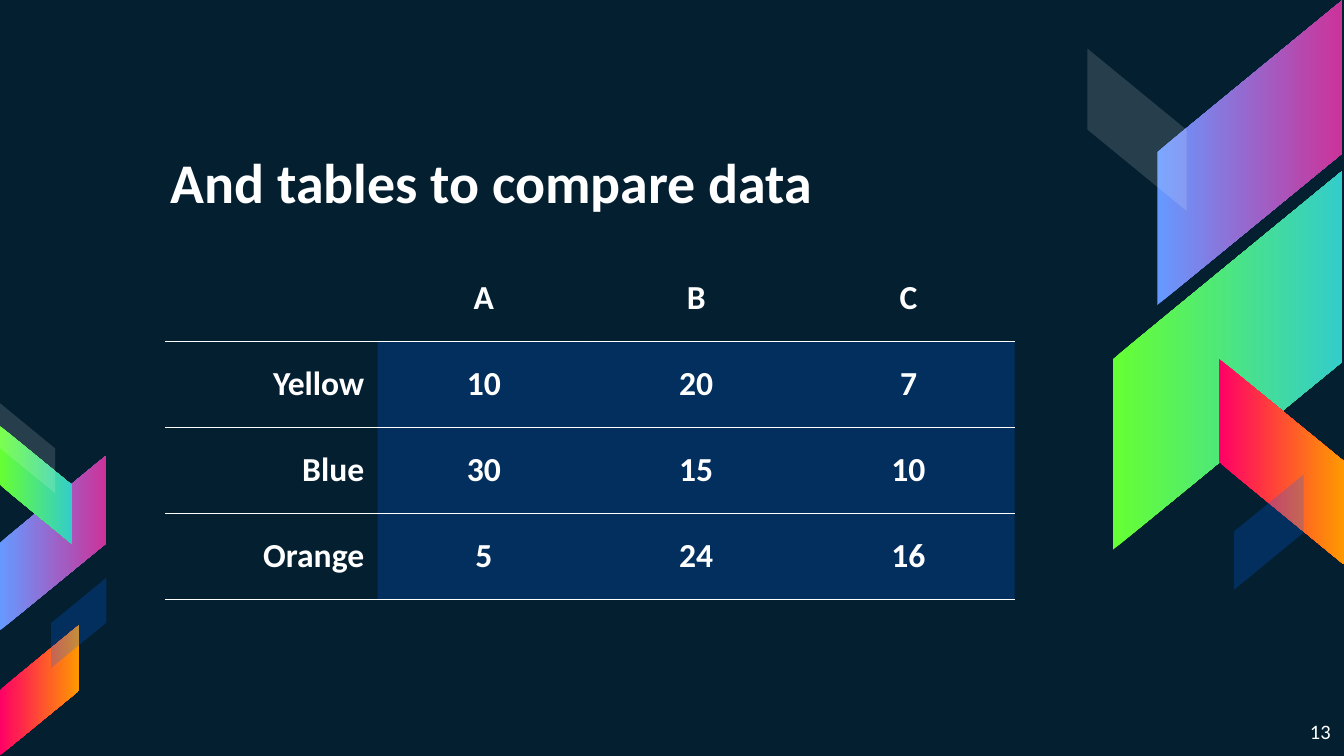
from lxml.etree import SubElement
from pptx import Presentation
from pptx.dml.color import RGBColor
from pptx.enum.shapes import MSO_SHAPE
from pptx.enum.text import MSO_ANCHOR, MSO_AUTO_SIZE, PP_ALIGN
from pptx.oxml import parse_xml
from pptx.oxml.ns import nsdecls, qn
from pptx.util import Inches, Pt

FONT = "Calibri"
COLORS = {
    "night": "041F30", "white": "FFFFFF", "blue": "0066FF",
    "magenta": "CC3399", "sky": "6699FF", "teal": "33CCCC",
    "lime": "66FF33", "pink": "FF0066", "orange": "FF9900",
}
NO_STYLE_NO_GRID = "{2D5ABB26-0587-4C30-8999-92F81FD0307C}"
BLUE_OPACITY, WHITE_OPACITY = 23, 14

# Ribbons: left, top, width, height within the cluster, rises to the right, paint.
# Paint is (left colour, right colour) or (colour, opacity in percent).
RIGHT_RIBBONS = [
    (0.52, 0, 1.38, 2.27, True, ("sky", "magenta")),
    (0.19, 1.27, 1.71, 2.82, True, ("lime", "teal")),
    (0.98, 2.67, 0.93, 1.53, False, ("pink", "orange")),
    (0, 0.36, 0.74, 1.21, False, ("white", WHITE_OPACITY)),
    (1.09, 3.53, 0.52, 0.86, True, ("blue", BLUE_OPACITY)),
]
LEFT_RIBBONS = [
    (0, 0.39, 0.79, 1.3, True, ("sky", "magenta")),
    (0, 0.17, 0.54, 0.88, False, ("lime", "teal")),
    (0, 1.65, 0.59, 0.97, True, ("pink", "orange")),
    (0, 0, 0.41, 0.67, False, ("white", WHITE_OPACITY)),
    (0.38, 1.3, 0.41, 0.67, True, ("blue", BLUE_OPACITY)),
]
ROWS = [
    ["", "A", "B", "C"],
    ["Yellow", "10", "20", "7"],
    ["Blue", "30", "15", "10"],
    ["Orange", "5", "24", "16"],
]


def rgb(name):
    return RGBColor.from_string(COLORS[name])


def fill_translucent(fill, properties, color, opacity):
    """Solid fill with opacity; properties is the XML element that holds the fill."""
    fill.solid()
    fill.fore_color.rgb = rgb(color)
    color_element = properties.find(f"{qn('a:solidFill')}/{qn('a:srgbClr')}")
    SubElement(color_element, qn("a:alpha"), val=str(opacity * 1000))


def write(paragraph, text, size, align, bold=True):
    paragraph.alignment = align
    run = paragraph.add_run()
    run.text = text
    run.font.name = FONT
    run.font.size = Pt(size)
    run.font.bold = bold
    run.font.color.rgb = rgb("white")


def set_insets(frame):
    frame.margin_left = frame.margin_right = Inches(0.1)
    frame.margin_top = frame.margin_bottom = Inches(0.1)


def add_ribbon(shapes, left, top, width, height, rises, paint):
    """Upright ribbon: a parallelogram turned on its side within the given box."""
    turned_left = left + (width - height) / 2
    turned_top = top + (height - width) / 2
    ribbon = shapes.add_shape(MSO_SHAPE.PARALLELOGRAM, Inches(turned_left),
                              Inches(turned_top), Inches(height), Inches(width))
    ribbon.adjustments[0] = 0.82
    ribbon.rotation = 270
    properties = ribbon._element.spPr
    if rises:
        properties.get_or_add_xfrm().set("flipH", "1")
    ribbon.shadow.inherit = False
    ribbon.line.fill.background()
    first, second = paint
    if isinstance(second, int):
        fill_translucent(ribbon.fill, properties, first, second)
    else:
        ribbon.fill.gradient()
        ribbon.fill.gradient_angle = 270
        for stop, color in zip(ribbon.fill.gradient_stops, paint):
            stop.color.rgb = rgb(color)


def add_ribbon_cluster(slide, left, top, ribbons):
    cluster = slide.shapes.add_group_shape()
    for x, y, width, height, rises, paint in ribbons:
        add_ribbon(cluster.shapes, left + x, top + y, width, height, rises, paint)


def place_title(slide, left, top, width, height, text):
    title = slide.shapes.title
    title.left, title.top = Inches(left), Inches(top)
    title.width, title.height = Inches(width), Inches(height)
    frame = title.text_frame
    frame.auto_size = MSO_AUTO_SIZE.NONE
    frame.vertical_anchor = MSO_ANCHOR.BOTTOM
    set_insets(frame)
    write(frame.paragraphs[0], text, 30, PP_ALIGN.LEFT)


def add_rule(cell, side):
    """Thin white line on one side of a cell, side being T or B."""
    cell._tc.get_or_add_tcPr().append(parse_xml(
        f'<a:ln{side} {nsdecls("a")} w="{Pt(0.75)}"><a:solidFill>'
        f'<a:srgbClr val="{COLORS["white"]}"/></a:solidFill></a:ln{side}>'))


def fill_cell(cell, text, is_header, is_label):
    cell.vertical_anchor = MSO_ANCHOR.MIDDLE
    cell.margin_left = cell.margin_right = Inches(0.1)
    cell.margin_top = cell.margin_bottom = Inches(0.07)
    if not is_header:
        add_rule(cell, "T")
    add_rule(cell, "B")
    if is_header or is_label:
        cell.fill.background()
    else:
        fill_translucent(cell.fill, cell._tc.tcPr, "blue", BLUE_OPACITY)
    if text:
        align = PP_ALIGN.RIGHT if is_label else PP_ALIGN.CENTER
        write(cell.text_frame.paragraphs[0], text, 18, align)


def add_comparison_table(slide, left, top, width, height, rows):
    table = slide.shapes.add_table(len(rows), len(rows[0]), Inches(left), Inches(top),
                                   Inches(width), Inches(height)).table
    table.first_row = table.horz_banding = False
    table._tbl.tblPr.find(qn("a:tableStyleId")).text = NO_STYLE_NO_GRID
    for r, row in enumerate(rows):
        for c, text in enumerate(row):
            fill_cell(table.cell(r, c), text, is_header=r == 0, is_label=c == 0)


def add_page_number(slide, left, top, width, height, number):
    frame = slide.shapes.add_textbox(Inches(left), Inches(top), Inches(width),
                                     Inches(height)).text_frame
    frame.word_wrap = True
    set_insets(frame)
    write(frame.paragraphs[0], number, 11, PP_ALIGN.RIGHT, bold=False)


def main():
    deck = Presentation()
    deck.slide_width = Inches(10)
    deck.slide_height = deck.slide_width * 9 // 16
    slide = deck.slides.add_slide(deck.slide_layouts[5])
    slide.background.fill.solid()
    slide.background.fill.fore_color.rgb = rgb("night")

    add_ribbon_cluster(slide, 8.09, 0, RIGHT_RIBBONS)
    add_ribbon_cluster(slide, 0, 3, LEFT_RIBBONS)
    place_title(slide, 1.17, 1, 6.53, 0.7, "And tables to compare data")
    add_comparison_table(slide, 1.23, 1.9, 6.32, 2.56, ROWS)
    add_page_number(slide, 9.36, 5.26, 0.64, 0.36, "13")
    deck.save("out.pptx")


if __name__ == "__main__":
    main()
